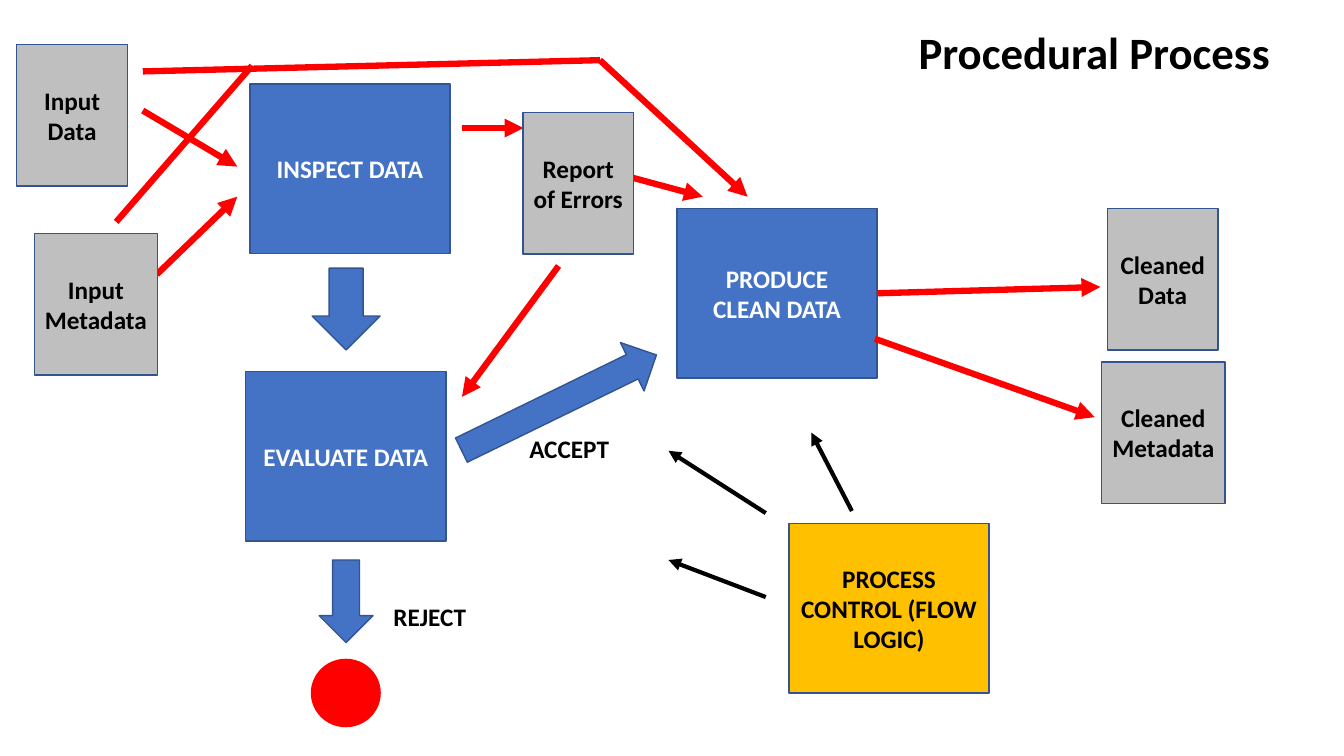
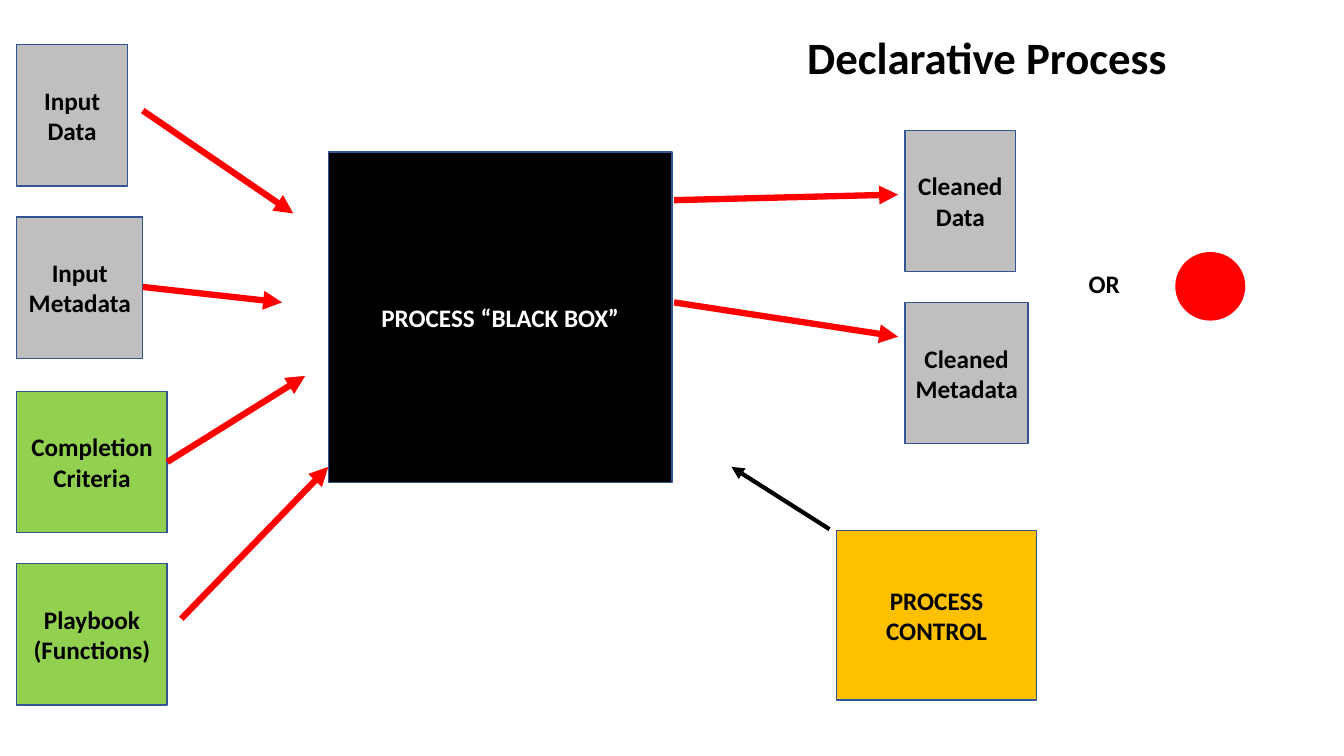
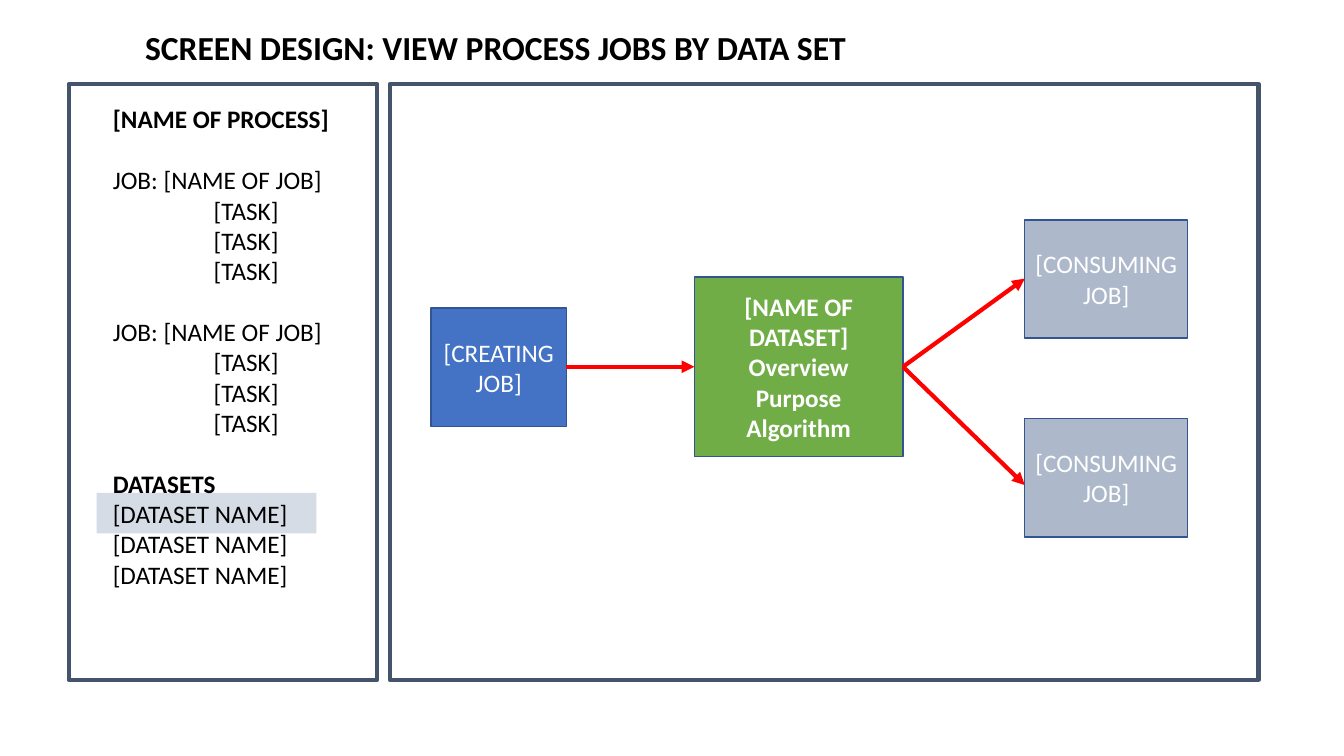
from pptx import Presentation
from pptx.dml.color import RGBColor
from pptx.enum.shapes import MSO_CONNECTOR as LINK, MSO_SHAPE as SHAPE
from pptx.enum.text import MSO_ANCHOR as ANCHOR, PP_ALIGN as ALIGN
from pptx.oxml.ns import qn
from pptx.util import Pt
from lxml.etree import SubElement

FONT = "Calibri"
BLACK, WHITE, RED = "000000", "FFFFFF", "FF0000"
BLUE, EDGE, GREY, GOLD = "4472C4", "325491", "BFBFBF", "FFC000"
LIME, GREEN, PALE, MIST, SLATE = "92D050", "70AD47", "ADB9CA", "D6DCE5", "44546A"
STEP_W, STEP_H = 143, 121
DATA_W, META_W, DOC_H = 79, 88, 101
LINE_H = 22


def rgb(color):
    """Turn a hex string into a colour."""
    return RGBColor.from_string(color)


def write(p, text, size=18, bold=True, color=BLACK, align=ALIGN.LEFT, indent=0, before=0):
    """Fill one paragraph with formatted text."""
    if indent:
        p._p.get_or_add_pPr().set("marL", str(Pt(indent)))
    p.alignment, p.space_before = align, Pt(before)
    r = p.add_run()
    r.text = text
    r.font.name, r.font.size, r.font.bold = FONT, Pt(size), bold
    r.font.color.rgb = rgb(color)


def write_lines(tf, lines, **fmt):
    """Write each (text, overrides) pair as a paragraph."""
    tf.word_wrap = True
    for i, (text, extra) in enumerate(lines):
        p = tf.add_paragraph() if i else tf.paragraphs[0]
        write(p, text, **{**fmt, **extra})


def label(s, x, y, w, h, text, **fmt):
    """Add a one-line text box."""
    tb = s.shapes.add_textbox(Pt(x), Pt(y), Pt(w), Pt(h))
    write_lines(tb.text_frame, [(text, {})], **fmt)


def block(s, x, y, w, h, fill, text="", kind=SHAPE.RECTANGLE, line=EDGE, weight=1, rot=0, **fmt):
    """Add a filled shape with centred text."""
    sp = s.shapes.add_shape(kind, Pt(x), Pt(y), Pt(w), Pt(h))
    sp.shadow.inherit = False
    sp.rotation = rot
    sp.fill.solid()
    sp.fill.fore_color.rgb = rgb(fill)
    if line:
        sp.line.color.rgb, sp.line.width = rgb(line), Pt(weight)
    else:
        sp.line.fill.background()
    if text:
        sp.text_frame.vertical_anchor = ANCHOR.MIDDLE
        lines = [(t, {}) for t in text.split("\n")]
        write_lines(sp.text_frame, lines, align=ALIGN.CENTER, **fmt)


def step(s, x, y, text, fill=BLUE, color=WHITE):
    """Add a process step."""
    block(s, x, y, STEP_W, STEP_H, fill, text, color=color)


def document(s, x, y, w, text, fill=GREY):
    """Add an input or output document."""
    block(s, x, y, w, DOC_H, fill, text)


def stop(s, x, y):
    """Add the red stop circle."""
    block(s, x, y, 49, 48, RED, kind=SHAPE.OVAL, line=RED)


def links(s, ends, color=RED, weight=4.5, head=True):
    """Draw a line for each (x1, y1, x2, y2)."""
    for x1, y1, x2, y2 in ends:
        c = s.shapes.add_connector(LINK.STRAIGHT, Pt(x1), Pt(y1), Pt(x2), Pt(y2))
        c.line.color.rgb, c.line.width = rgb(color), Pt(weight)
        if head:
            SubElement(c.line._get_or_add_ln(), qn("a:tailEnd"), type="triangle")
        SubElement(c._element.spPr, qn("a:effectLst"))


def procedural(s):
    """Build the procedural process slide."""
    label(s, 649, 14, 270, 46, "Procedural Process", size=32)
    step(s, 178.5, 60, "INSPECT DATA")
    step(s, 175.5, 265.5, "EVALUATE DATA")
    step(s, 483.5, 149, "PRODUCE\nCLEAN DATA")
    step(s, 563.5, 374, "PROCESS CONTROL (FLOW LOGIC)", GOLD, BLACK)
    for x, y, w, h, rot in [(223, 191.5, 48.5, 58.5, 0), (228, 400, 38.5, 59, 0), (380, 210, 38.5, 155, 244)]:
        block(s, x, y, w, h, BLUE, kind=SHAPE.DOWN_ARROW, rot=rot)
    stop(s, 222.5, 471)
    label(s, 274, 426, 80, 29, "REJECT")
    label(s, 371, 306, 80, 29, "ACCEPT")
    links(s, [(102, 51, 428.5, 43), (83, 158.5, 180, 47)], head=False)
    links(s, [(102, 79, 169.5, 119), (112, 196, 169.5, 140.5), (330, 91.5, 374, 91.5),
              (399, 190, 330, 283.5), (428.5, 43, 534, 140.5), (452, 127, 502, 140.5),
              (626.5, 209.5, 786, 205), (625, 242, 782, 298)])
    links(s, [(547, 426.5, 477.5, 400), (547, 366.5, 477.5, 322), (608.5, 365, 579.5, 309)], BLACK, 3)
    document(s, 12, 32, DATA_W, "Input\nData")
    document(s, 24.5, 167, META_W, "Input\nMetadata")
    document(s, 373.5, 80.5, DATA_W, "Report of Errors")
    document(s, 791, 149, DATA_W, "Cleaned\nData")
    document(s, 787, 258.5, META_W, "Cleaned\nMetadata")


def declarative(s):
    """Build the declarative process slide."""
    label(s, 569.5, 17.5, 299, 46, "Declarative Process", size=32)
    document(s, 12, 32, DATA_W, "Input\nData")
    document(s, 12, 155, 90, "Input\nMetadata")
    document(s, 12, 279.5, 107.5, "Completion Criteria", LIME)
    document(s, 12, 402.5, 107.5, "Playbook (Functions)", LIME)
    block(s, 234.5, 108.5, 245.5, 236, BLACK, "PROCESS “BLACK BOX”", color=WHITE)
    document(s, 646.5, 93, DATA_W, "Cleaned\nData")
    document(s, 646.5, 216, META_W, "Cleaned\nMetadata")
    label(s, 770.5, 188, 45, 29, "OR")
    stop(s, 840, 180.5)
    step(s, 597.5, 379, "PROCESS CONTROL", GOLD, BLACK)
    links(s, [(102, 79, 209.5, 152.5), (102, 205, 201.5, 216), (119.5, 330, 218, 268.5),
              (129.5, 442, 234.5, 333.5), (481.5, 143, 641.5, 139), (481.5, 216, 641.5, 240.5)])
    links(s, [(592.5, 378, 522.5, 333.5)], BLACK, 3)


def screen_design(s):
    """Build the job viewer mock-up slide."""
    label(s, 96.5, 16, 724, 36, "SCREEN DESIGN: VIEW PROCESS JOBS BY DATA SET", size=24)
    for x, w in [(49, 220.5), (278.5, 620.5)]:
        block(s, x, 60, w, 425.5, WHITE, line=SLATE, weight=3)
    block(s, 69, 352, 157, 29, MIST, line=None)
    job = [("JOB: [NAME OF JOB]", {"before": LINE_H})] + [("[TASK]", {"indent": 72})] * 3
    lines = [("[NAME OF PROCESS]", {"bold": True}), *job, *job,
             ("DATASETS", {"bold": True, "before": LINE_H})] + [("[DATASET NAME]", {})] * 3
    tb = s.shapes.add_textbox(Pt(73.5), Pt(70.5), Pt(171.5), Pt(378))
    write_lines(tb.text_frame, lines, bold=False)
    block(s, 308, 220, 96.5, 84.5, BLUE, "[CREATING\nJOB]", bold=False, color=WHITE)
    block(s, 496, 198, 149, 128, GREEN, "[NAME OF DATASET]\nOverview\nPurpose\nAlgorithm", color=WHITE)
    for y in (157, 299):
        block(s, 732, y, 116.5, 84.5, PALE, "[CONSUMING\nJOB]", bold=False, color=WHITE)
    links(s, [(404.5, 262, 496, 262), (645, 262, 732, 199), (645, 262, 732, 346.5)], weight=3)


def main():
    """Build and save the deck."""
    prs = Presentation()
    prs.slide_width, prs.slide_height = Pt(960), Pt(540)
    for build in (procedural, declarative, screen_design):
        build(prs.slides.add_slide(prs.slide_layouts[6]))
    prs.save("out.pptx")


if __name__ == "__main__":
    main()
